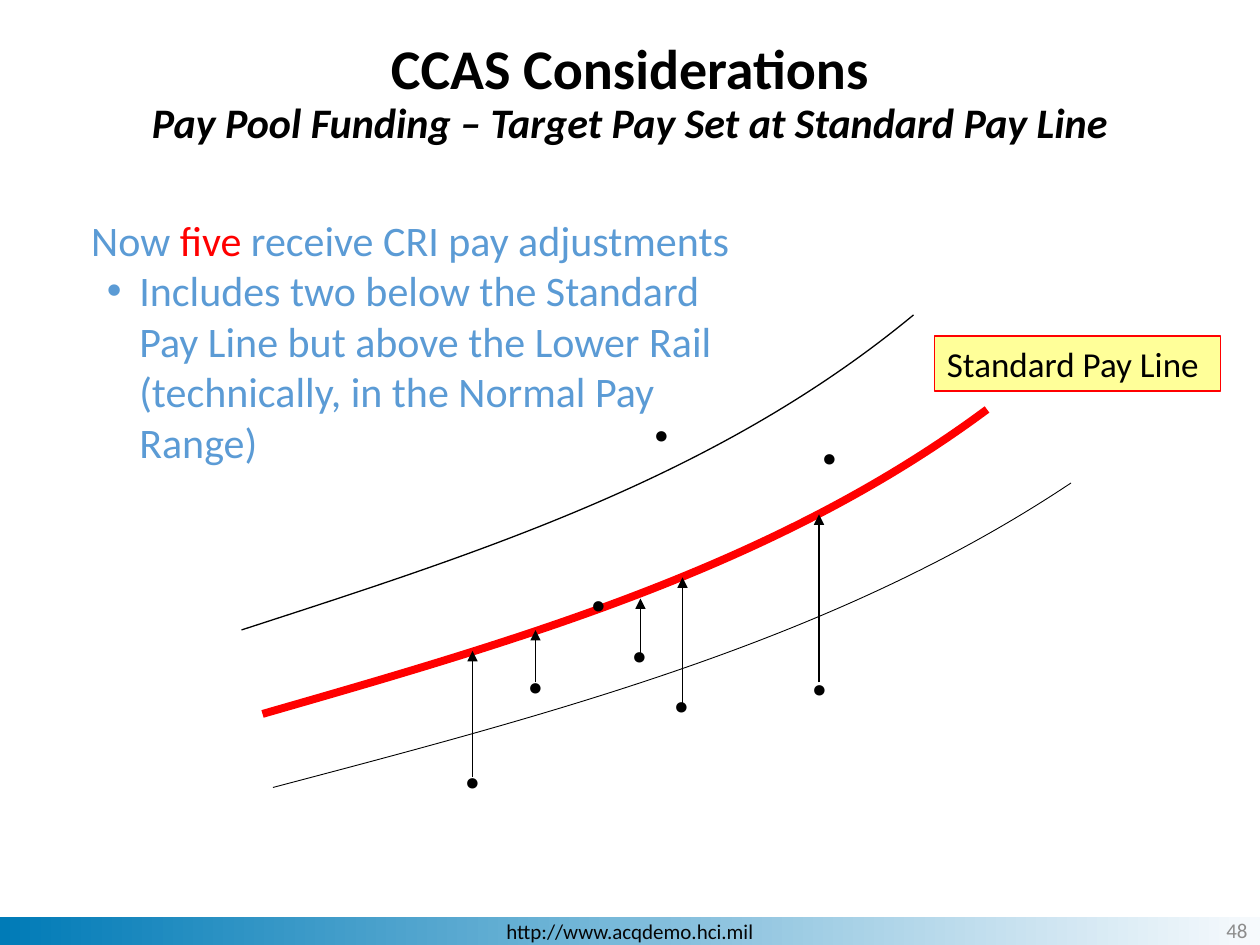
from typing import NamedTuple

from lxml import etree
from pptx import Presentation
from pptx.dml.color import RGBColor
from pptx.enum.shapes import MSO_CONNECTOR, MSO_SHAPE
from pptx.enum.text import MSO_ANCHOR, MSO_AUTO_SIZE, PP_ALIGN
from pptx.oxml.ns import qn
from pptx.util import Pt

LINE = MSO_CONNECTOR.STRAIGHT
RECT = MSO_SHAPE.RECTANGLE
LEFT, CENTER, RIGHT = PP_ALIGN.LEFT, PP_ALIGN.CENTER, PP_ALIGN.RIGHT
TOP, MIDDLE = MSO_ANCHOR.TOP, MSO_ANCHOR.MIDDLE
GROW = MSO_AUTO_SIZE.SHAPE_TO_FIT_TEXT
FONT = "Calibri"
BLACK, RED, BLUE = "000000", "FF0000", "5B9BD5"


class Curve(NamedTuple):
    """A cubic curve: start, two control points, end."""
    points: list[tuple[float, float]]
    color: str
    width: float


class Dot(NamedTuple):
    x: float
    y: float
    wrap: bool = False


class Arrow(NamedTuple):
    x: float
    start: float
    end: float


CURVES = [
    Curve([(156, 450), (317, 407.5), (478, 365.5), (612, 276)], BLACK, 0.5),
    Curve([(138, 360), (273.5, 316), (409.5, 273), (522, 180)], BLACK, 0.75),
    Curve([(150, 408), (296, 366), (443, 324), (564, 234)], RED, 4.5),
]
DOTS = [
    Dot(294, 353), Dot(258, 407), Dot(330, 306, True), Dot(366, 209, True),
    Dot(353.5, 335), Dot(377.5, 363.5), Dot(456, 354), Dot(462, 222, True),
]
ARROWS = [
    Arrow(270, 444, 372), Arrow(390, 402, 330), Arrow(468, 390, 294),
    Arrow(306, 390, 360), Arrow(366, 374.5, 342),
]


def rgb(color: str) -> RGBColor:
    return RGBColor.from_string(color)


def style(para, size: float, color: str, bold: bool = False, align=LEFT) -> None:
    para.alignment = align
    font = para.font
    font.name, font.size, font.bold = FONT, Pt(size), bold
    font.color.rgb = rgb(color)


def add_box(slide, x: float, y: float, w: float, h: float, anchor=TOP):
    """Add a wrapping text box and return its text frame."""
    box = slide.shapes.add_textbox(Pt(x), Pt(y), Pt(w), Pt(h))
    frame = box.text_frame
    frame.word_wrap, frame.vertical_anchor = True, anchor
    return frame


def add_rect(slide, x: float, y: float, w: float, h: float):
    rect = slide.shapes.add_shape(RECT, Pt(x), Pt(y), Pt(w), Pt(h))
    rect.shadow.inherit = False
    rect.text_frame.vertical_anchor = MIDDLE
    return rect


def add_bar(slide) -> None:
    bar = add_rect(slide, 0, 524, 720, 16)
    bar.line.fill.background()
    bar.fill.gradient()
    bar.fill.gradient_angle = 180
    for stop, color in zip(bar.fill.gradient_stops, ("F7FAFD", "007BB7")):
        stop.color.rgb = rgb(color)
    para = bar.text_frame.paragraphs[0]
    para.text = "http://www.acqdemo.hci.mil"
    style(para, 12, "060606", align=CENTER)


def add_label(slide) -> None:
    label = add_rect(slide, 534, 192, 163.5, 31.5)
    label.fill.solid()
    label.fill.fore_color.rgb = rgb("FFFF99")
    label.line.color.rgb = rgb(RED)
    label.line.width = Pt(0.75)
    frame = label.text_frame
    frame.word_wrap, frame.auto_size, frame.vertical_anchor = False, GROW, TOP
    para = frame.paragraphs[0]
    para.text = "Standard Pay Line"
    style(para, 20, BLACK)


def add_curve(slide, curve: Curve) -> None:
    """Build the control polygon, then turn its segments into one Bezier."""
    first, *rest = [(Pt(x), Pt(y)) for x, y in curve.points]
    pen = slide.shapes.build_freeform(*first)
    pen.add_line_segments(rest, close=False)
    shape = pen.convert_to_shape()
    shape.shadow.inherit = False
    shape.fill.background()
    shape.line.color.rgb = rgb(curve.color)
    shape.line.width = Pt(curve.width)
    track = next(shape.element.iter(qn("a:path")))
    bezier = etree.SubElement(track, qn("a:cubicBezTo"))
    for step in track.findall(qn("a:lnTo")):
        bezier.append(step[0])
        track.remove(step)


def add_dot(slide, dot: Dot) -> None:
    frame = add_box(slide, dot.x, dot.y, 30 if dot.wrap else 24.5, 55.5)
    frame.word_wrap, frame.auto_size = dot.wrap, GROW
    para = frame.paragraphs[0]
    para.text = "."
    style(para, 40, BLACK, bold=True)


def add_arrow(slide, arrow: Arrow) -> None:
    x = Pt(arrow.x)
    link = slide.shapes.add_connector(LINE, x, Pt(arrow.start), x, Pt(arrow.end))
    link.line.color.rgb = rgb(BLACK)
    link.line.width = Pt(0.75)
    props = link.element.spPr
    etree.SubElement(props.find(qn("a:ln")), qn("a:tailEnd"), type="triangle")
    etree.SubElement(props, qn("a:effectLst"))


def add_body(slide) -> None:
    frame = add_box(slide, 45, 119, 384, 150.5)
    lead = frame.paragraphs[0]
    style(lead, 24, BLUE)
    for text, color in (("Now ", BLUE), ("five", RED),
                        (" receive CRI pay adjustments", BLUE)):
        run = lead.add_run()
        run.text = text
        run.font.color.rgb = rgb(color)
    item = frame.add_paragraph()
    item.text = ("Includes two below the Standard Pay Line but above the "
                 "Lower Rail (technically, in the Normal Pay Range)")
    props = item._p.get_or_add_pPr()
    props.set("marL", str(Pt(27.5)))
    props.set("indent", str(Pt(-18.5)))
    etree.SubElement(props, qn("a:buFont"), typeface="Arial")
    etree.SubElement(props, qn("a:buChar"), char="•")
    style(item, 24, BLUE)


def add_number(slide) -> None:
    para = add_box(slide, 558, 517, 162, 29, MIDDLE).paragraphs[0]
    para.text = "48"
    style(para, 12, "8C8C8C", align=RIGHT)


def add_title(slide) -> None:
    para = add_box(slide, 0, 22, 720, 64, MIDDLE).paragraphs[0]
    style(para, 32, BLACK, bold=True, align=CENTER)
    para.line_spacing = 0.9
    head = para.add_run()
    head.text = "CCAS Considerations"
    para.add_line_break()
    sub = para.add_run()
    sub.text = "Pay Pool Funding – Target Pay Set at Standard Pay Line"
    sub.font.size, sub.font.italic = Pt(24), True


def main() -> None:
    deck = Presentation()
    deck.slide_width, deck.slide_height = Pt(720), Pt(540)
    slide = deck.slides.add_slide(deck.slide_layouts[6])
    add_bar(slide)
    add_label(slide)
    for curve in CURVES:
        add_curve(slide, curve)
    for dot in DOTS:
        add_dot(slide, dot)
    for arrow in ARROWS:
        add_arrow(slide, arrow)
    add_body(slide)
    add_number(slide)
    add_title(slide)
    deck.save("out.pptx")


if __name__ == "__main__":
    main()
